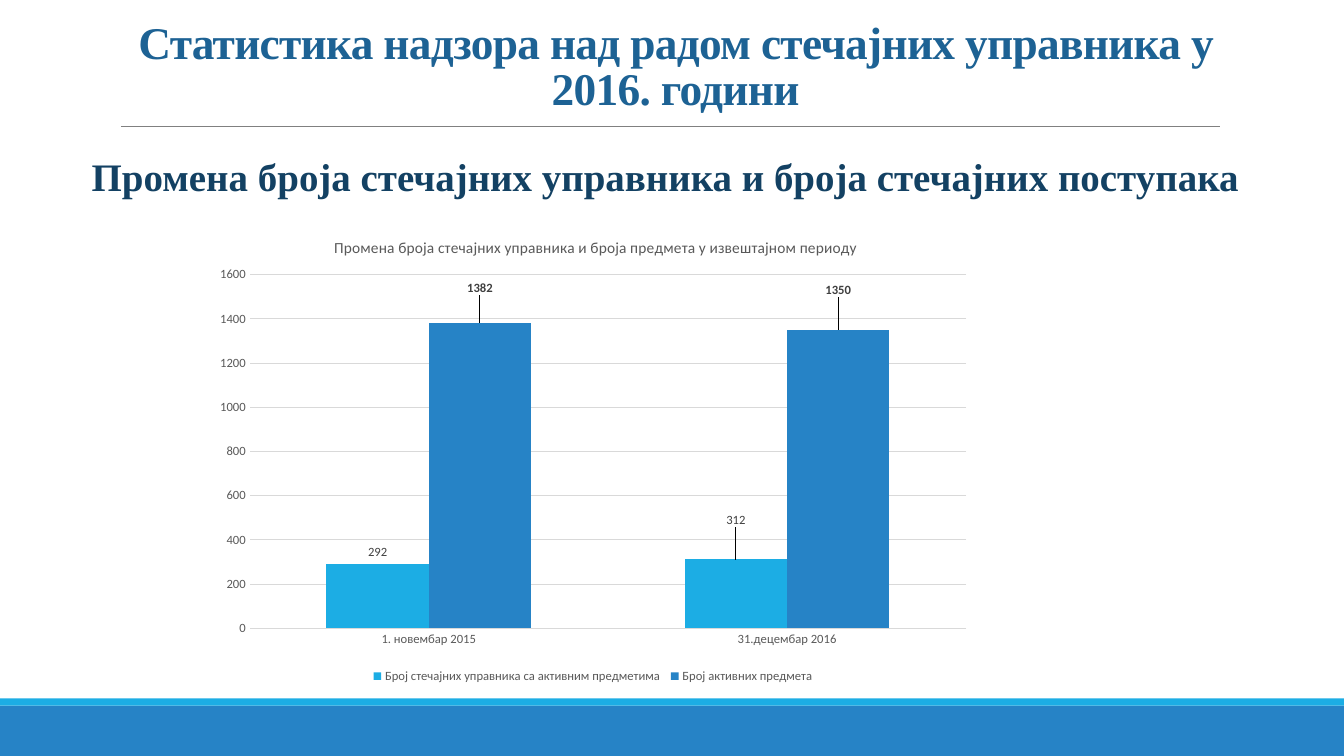
from lxml import etree
from pptx import Presentation
from pptx.chart.data import CategoryChartData
from pptx.dml.color import RGBColor
from pptx.enum.chart import XL_CHART_TYPE, XL_LABEL_POSITION, XL_LEGEND_POSITION, XL_TICK_MARK
from pptx.enum.shapes import MSO_CONNECTOR, MSO_SHAPE
from pptx.enum.text import MSO_ANCHOR, MSO_AUTO_SIZE, PP_ALIGN
from pptx.oxml.ns import qn
from pptx.util import Inches, Pt

COLUMNS = XL_CHART_TYPE.COLUMN_CLUSTERED
OUTSIDE_END = XL_LABEL_POSITION.OUTSIDE_END
LEGEND_BOTTOM = XL_LEGEND_POSITION.BOTTOM
NO_TICK = XL_TICK_MARK.NONE
STRAIGHT = MSO_CONNECTOR.STRAIGHT
RECTANGLE = MSO_SHAPE.RECTANGLE
TOP, BOTTOM = MSO_ANCHOR.TOP, MSO_ANCHOR.BOTTOM
NO_AUTO_SIZE = MSO_AUTO_SIZE.NONE
LEFT, CENTER = PP_ALIGN.LEFT, PP_ALIGN.CENTER

COLORS = {
    "sky": "1CADE4",
    "blue": "2683C6",
    "title": "1D6294",
    "heading": "134163",
    "rule": "808080",
    "grid": "D9D9D9",
    "axis": "595959",
    "label": "404040",
}
HEADING_FONT = "Times New Roman"
CHART_FONT = "Calibri"

CATEGORIES = ["1. новембар 2015", "31.децембар 2016"]
SERIES = [
    {
        "name": "Број стечајних управника са активним предметима ",
        "values": [292, 312],
        "color": "sky",
        "bold": False,
        "offsets": [(0, 0), (0, -0.06)],
    },
    {
        "name": "Број активних предмета",
        "values": [1382, 1350],
        "color": "blue",
        "bold": True,
        "offsets": [(0, -0.05), (0, -0.06)],
    },
]


def rgb(name):
    """Return the named colour."""
    return RGBColor.from_string(COLORS[name])


def style_font(font, size, color, name=CHART_FONT, bold=False):
    """Set the size, colour, face and weight of a font."""
    font.size = Pt(size)
    font.color.rgb = rgb(color)
    font.name = name
    font.bold = bold


def write_text(frame, text, size, color, align=LEFT, anchor=TOP, line_spacing=1.0,
               before=0, after=0, margins=(0.1, 0.05, 0.1, 0.05), tracking=0):
    """Write one bold heading paragraph into a text frame."""
    frame.word_wrap = True
    frame.auto_size = NO_AUTO_SIZE
    frame.vertical_anchor = anchor
    (frame.margin_left, frame.margin_top,
     frame.margin_right, frame.margin_bottom) = map(Inches, margins)
    paragraph = frame.paragraphs[0]
    paragraph.alignment = align
    paragraph.line_spacing = line_spacing
    paragraph.space_before, paragraph.space_after = Pt(before), Pt(after)
    properties = paragraph._p.get_or_add_pPr()
    properties.set("marL", "0")
    properties.set("indent", "0")
    etree.SubElement(properties, qn("a:buNone"))
    run = paragraph.add_run()
    run.text = text
    style_font(run.font, size, color, HEADING_FONT, True)
    run.font._element.set("spc", str(round(tracking * 100)))


def place(shape, left, top, width, height):
    """Move and size a shape, in inches."""
    shape.left, shape.top = Inches(left), Inches(top)
    shape.width, shape.height = Inches(width), Inches(height)


def add_band(slide, top, height, color):
    """Add a full-width coloured band."""
    band = slide.shapes.add_shape(
        RECTANGLE, Inches(0), Inches(top), Inches(13.33), Inches(height))
    band.shadow.inherit = False
    band.fill.solid()
    band.fill.fore_color.rgb = rgb(color)
    band.line.fill.background()


def add_rule(slide, left, right, top):
    """Add the thin horizontal line below the title."""
    rule = slide.shapes.add_connector(
        STRAIGHT, Inches(left), Inches(top), Inches(right), Inches(top))
    rule.line.color.rgb = rgb("rule")
    rule.line.width = Pt(0.5)
    etree.SubElement(rule._element.spPr, qn("a:effectLst"))


def set_layout(element, index, **values):
    """Give a chart element a manual layout as child number index."""
    for old in element.findall(qn("c:layout")):
        element.remove(old)
    layout = etree.Element(qn("c:layout"))
    manual = etree.SubElement(layout, qn("c:manualLayout"))
    for key, value in values.items():
        etree.SubElement(manual, qn(f"c:{key}")).set("val", str(value))
    element.insert(index, layout)


def style_axis(axis):
    """Hide the line and ticks of an axis and style its labels."""
    axis.major_tick_mark = axis.minor_tick_mark = NO_TICK
    axis.format.line.fill.background()
    style_font(axis.tick_labels.font, 9, "axis")


def style_series(series, color, bold, offsets):
    """Colour a series and place its value labels."""
    series.format.fill.solid()
    series.format.fill.fore_color.rgb = rgb(color)
    labels = series.data_labels
    labels.show_value = True
    labels.position = OUTSIDE_END
    style_font(labels.font, 9, "label", bold=bold)
    for number, (x, y) in enumerate(offsets):
        if (x, y) != (0, 0):
            label = series.points[number].data_label
            style_font(label.font, 9, "label", bold=bold)
            label.position = OUTSIDE_END
            set_layout(series._element.xpath(f"c:dLbls/c:dLbl[c:idx/@val={number}]")[0],
                       1, x=x, y=y)


def add_column_chart(slide, title):
    """Add the clustered column chart."""
    data = CategoryChartData()
    data.categories = CATEGORIES
    for entry in SERIES:
        data.add_series(entry["name"], entry["values"])
    chart = slide.shapes.add_chart(
        COLUMNS, Inches(2.03), Inches(2.14), Inches(7.7), Inches(4.68), data).chart
    chart.font.size, chart.font.name = Pt(10), CHART_FONT

    chart.has_title = True
    run = chart.chart_title.text_frame.paragraphs[0].add_run()
    run.text = title
    style_font(run.font, 11, "axis")
    set_layout(chart.chart_title._element, 1, xMode="edge", yMode="edge", x=0.163, y=0.04)

    chart.has_legend = True
    chart.legend.position = LEGEND_BOTTOM
    chart.legend.include_in_layout = False
    style_font(chart.legend.font, 9, "axis")

    style_axis(chart.category_axis)
    style_axis(chart.value_axis)
    chart.value_axis.minimum_scale, chart.value_axis.maximum_scale = 0, 1600
    chart.value_axis.major_unit = 200
    grid = chart.value_axis.major_gridlines.format.line
    grid.color.rgb, grid.width = rgb("grid"), Pt(0.75)

    plot = chart.plots[0]
    plot.gap_width, plot.overlap, plot.vary_by_categories = 150, 0, False
    for series, entry in zip(plot.series, SERIES):
        style_series(series, entry["color"], entry["bold"], entry["offsets"])
    set_layout(chart._chartSpace.chart.plotArea, 0, layoutTarget="inner",
               xMode="edge", yMode="edge", x=0.058, y=0.125, w=0.923, h=0.75)


def main():
    """Build the slide and save it."""
    presentation = Presentation()
    presentation.slide_width, presentation.slide_height = Inches(13.33), Inches(7.5)
    slide = presentation.slides.add_slide(presentation.slide_layouts[1])
    title, body = slide.placeholders

    add_band(slide, 7, 0.5, "blue")
    add_band(slide, 6.93, 0.07, "sky")
    add_rule(slide, 1.2, 12.1, 1.25)

    place(title, 1.2, 0.31, 11, 1.59)
    write_text(title.text_frame, "Статистика надзора над радом стечајних управника у 2016. години",
               32.4, "title", align=CENTER, anchor=BOTTOM, line_spacing=0.85,
               margins=(0.1, 0, 0.1, 0.76), tracking=-0.5)
    place(body, 0.81, 1.52, 11.51, 0.87)
    write_text(body.text_frame, "Промена броја стечајних управника и броја стечајних поступака",
               27.8, "heading", line_spacing=0.9, before=12, after=2,
               margins=(0.1, 0.05, 0, 0.05))
    add_column_chart(
        slide, "Промена броја стечајних управника и броја предмета у извештајном периоду")
    presentation.save("out.pptx")


if __name__ == "__main__":
    main()
